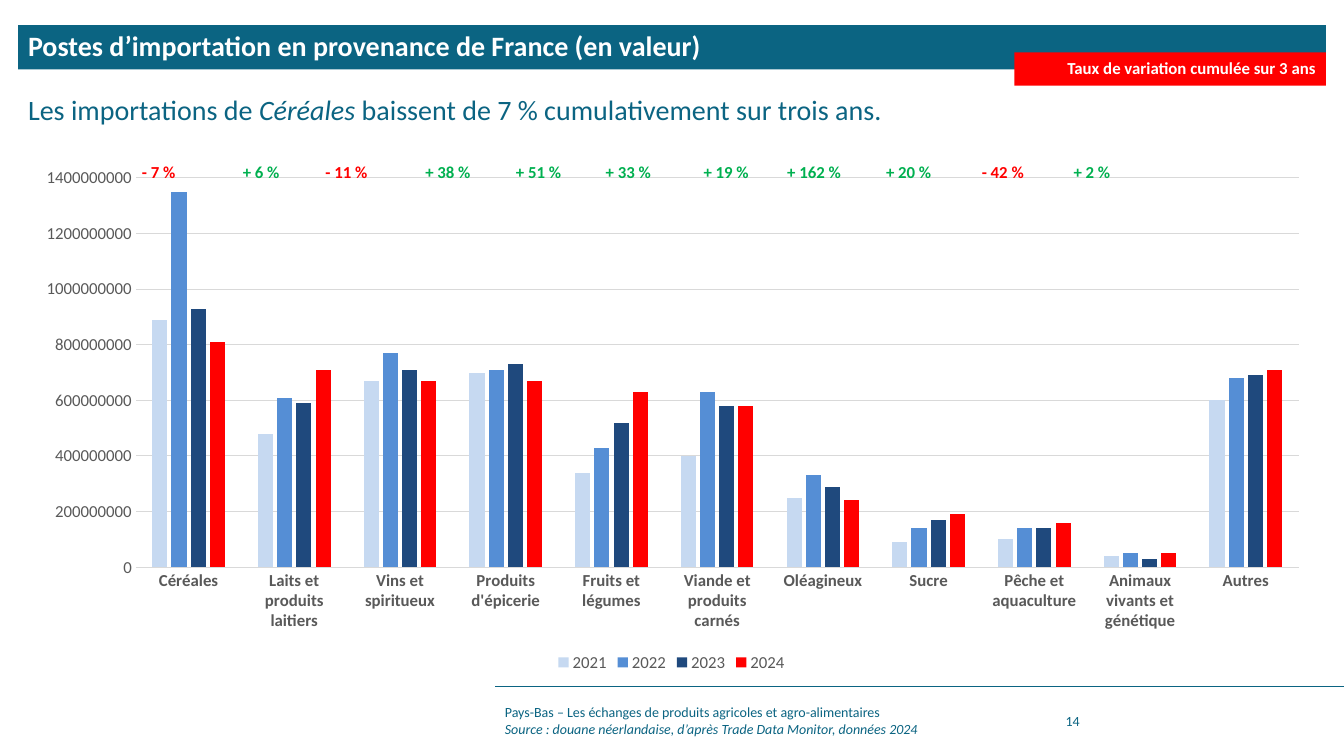
from lxml import etree
from pptx import Presentation
from pptx.chart.data import CategoryChartData
from pptx.dml.color import RGBColor
from pptx.enum.chart import XL_CHART_TYPE as ChartType, XL_LEGEND_POSITION as LegendPos, XL_TICK_MARK as Tick
from pptx.enum.shapes import MSO_CONNECTOR as Connector, MSO_SHAPE as Shape
from pptx.enum.text import MSO_ANCHOR as Anchor, PP_ALIGN as Align
from pptx.oxml import parse_xml
from pptx.oxml.ns import nsdecls, qn
from pptx.util import Inches, Pt

FONT = "Calibri"
COLORS = {"teal": "0B6482", "white": "FFFFFF", "red": "FF0000", "green": "00B050",
          "grey": "595959", "grid": "D9D9D9", "2021": "C6D9F1", "2022": "558ED5",
          "2023": "1F497D", "2024": "FF0000"}
CATEGORIES = ["Céréales", "Laits et produits laitiers", "Vins et spiritueux",
              "Produits d'épicerie", "Fruits et légumes", "Viande et produits carnés",
              "Oléagineux", "Sucre", "Pêche et aquaculture",
              "Animaux vivants et génétique", "Autres"]
MILLIONS = {"2021": [890, 480, 670, 700, 340, 400, 250, 90, 100, 40, 600],
            "2022": [1350, 610, 770, 710, 430, 630, 330, 140, 140, 50, 680],
            "2023": [930, 590, 710, 730, 520, 580, 290, 170, 140, 30, 690],
            "2024": [810, 710, 670, 670, 630, 580, 240, 190, 160, 50, 710]}
RATES = ["- 7 %", "+ 6 %", "- 11 %", "+ 38 %", "+ 51 %", "+ 33 %", "+ 19 %",
         "+ 162 %", "+ 20 %", "- 42 %", "+ 2 %"]
RATE_TABS = [1.0, 1.82, 2.81, 3.71, 4.6, 5.57, 6.4, 7.38, 8.33, 9.24]


def rgb(name):
    """Return the named colour."""
    return RGBColor.from_string(COLORS[name])


def style_font(font, size, color, bold=False, italic=False):
    """Set the face, size, colour and style of a font."""
    font.name, font.size, font.bold, font.italic = FONT, Pt(size), bold, italic
    font.color.rgb = rgb(color)


def add_run(p, text, size=12, color="teal", bold=False, italic=False):
    """Add a formatted run to a paragraph."""
    r = p.add_run()
    r.text = text
    style_font(r.font, size, color, bold, italic)


def add_box(slide, box, fill=None, anchor=Anchor.MIDDLE):
    """Add a text box, or a filled rectangle, and return its text frame."""
    box = [Inches(v) for v in box]
    if fill:
        sp = slide.shapes.add_shape(Shape.RECTANGLE, *box)
        sp.shadow.inherit = False
        sp.fill.solid()
        sp.fill.fore_color.rgb = rgb(fill)
        sp.line.fill.background()
    else:
        sp = slide.shapes.add_textbox(*box)
    tf = sp.text_frame
    tf.word_wrap = True
    tf.vertical_anchor = anchor
    return tf


def add_header(slide, left, top, width):
    """Place the title band, the red tag at its right end and the key message."""
    p = add_box(slide, (left, top, width, 0.44), "teal").paragraphs[0]
    p.alignment, p.line_spacing = Align.LEFT, 0.9
    add_run(p, "Postes d’importation en provenance de France (en valeur)", 20, "white", bold=True)

    p = add_box(slide, (left, top + 0.68, width, 0.39), anchor=Anchor.TOP).paragraphs[0]
    p.line_spacing = 0.8
    add_run(p, "Les importations de ", 20)
    add_run(p, "Céréales ", 20, italic=True)
    add_run(p, "baissent de 7 % cumulativement sur trois ans.", 20)

    tag_width = 3.09
    p = add_box(slide, (left + width - tag_width, top + 0.27, tag_width, 0.33), "red").paragraphs[0]
    p.alignment, p.line_spacing = Align.RIGHT, 0.9
    add_run(p, "Taux de variation cumulée sur 3 ans", 12, "white", bold=True)


def add_imports_chart(slide, left, top, width, height):
    """Place the clustered columns of imports by product and year."""
    data = CategoryChartData(number_format="General")
    data.categories = CATEGORIES
    for year, values in MILLIONS.items():
        data.add_series(year, [v * 1_000_000 for v in values])
    box = [Inches(v) for v in (left, top, width, height)]
    chart = slide.shapes.add_chart(ChartType.COLUMN_CLUSTERED, *box, data).chart
    style_font(chart.font, 12, "grey")
    chart.has_title = False
    chart.has_legend = True
    chart.legend.position = LegendPos.BOTTOM
    chart.legend.include_in_layout = False
    style_font(chart.legend.font, 12, "grey")

    plot = chart.plots[0]
    plot.gap_width, plot.overlap, plot.vary_by_categories = 219, -27, False
    for series in plot.series:
        series.format.fill.solid()
        series.format.fill.fore_color.rgb = rgb(series.name)

    cat, val = chart.category_axis, chart.value_axis
    for axis in (cat, val):
        axis.major_tick_mark = axis.minor_tick_mark = Tick.NONE
        style_font(axis.tick_labels.font, 12, "grey", bold=axis is cat)
    val.minimum_scale, val.maximum_scale, val.major_unit = 0, 1_400_000_000, 200_000_000
    val.tick_labels.number_format = "General"
    val.tick_labels.number_format_is_linked = False
    val.format.line.fill.background()
    for line in (cat.format.line, val.major_gridlines.format.line):
        line.color.rgb = rgb("grid")
        line.width = Pt(0.75)
    set_plot_layout(chart, x=0.09, y=0.04, w=0.89, h=0.75)


def set_plot_layout(chart, **fractions):
    """Fix the inner plot area as fractions of the chart."""
    area = chart.plots[0]._element.getparent()
    for old in area.findall(qn("c:layout")):
        area.remove(old)
    modes = '<c:layoutTarget val="inner"/><c:xMode val="edge"/><c:yMode val="edge"/>'
    sizes = "".join(f'<c:{k} val="{v}"/>' for k, v in fractions.items())
    area.insert(0, parse_xml(f'<c:layout {nsdecls("c")}><c:manualLayout>{modes}{sizes}'
                             '</c:manualLayout></c:layout>'))


def add_rates(slide, left, top, width, height):
    """Place the row of growth rates on tab stops."""
    p = add_box(slide, (left, top, width, height), anchor=Anchor.TOP).paragraphs[0]
    tabs = etree.SubElement(p._p.get_or_add_pPr(), qn("a:tabLst"))
    for pos in RATE_TABS:
        etree.SubElement(tabs, qn("a:tab"), pos=str(Inches(pos)), algn="l")
    for i, rate in enumerate(RATES):
        color = "red" if rate.startswith("-") else "green"
        add_run(p, f"\t{rate}" if i else rate, 12, color, bold=True)


def add_footer(slide, left, top, right):
    """Place the rule, the source and the page number."""
    rule = slide.shapes.add_connector(Connector.STRAIGHT, Inches(right), Inches(top),
                                      Inches(left), Inches(top))
    rule.line.color.rgb = rgb("teal")
    rule.line.width = Pt(0.5)
    etree.SubElement(rule._element.spPr, qn("a:effectLst"))
    tf = add_box(slide, (left, top + 0.14, 5.43, 0.4))
    add_run(tf.paragraphs[0], "Pays-Bas – Les échanges de produits agricoles et agro-alimentaires", 10)
    add_run(tf.add_paragraph(),
            "Source : douane néerlandaise, d’après Trade Data Monitor, données 2024", 10, italic=True)
    tf = add_box(slide, (left + 5.56, top + 0.14, 0.99, 0.4))
    add_run(tf.paragraphs[0], "14", 10)


def main():
    """Build and save the slide."""
    prs = Presentation()
    prs.slide_width, prs.slide_height = Inches(13.33), Inches(7.5)
    slide = prs.slides.add_slide(prs.slide_layouts[6])
    add_footer(slide, 4.91, 6.81, 13.33)
    add_header(slide, 0.18, 0.25, 12.97)
    add_imports_chart(slide, 0.18, 1.56, 12.96, 5.15)
    add_rates(slide, 1.31, 1.56, 11.84, 0.3)
    prs.save("out.pptx")


if __name__ == "__main__":
    main()
